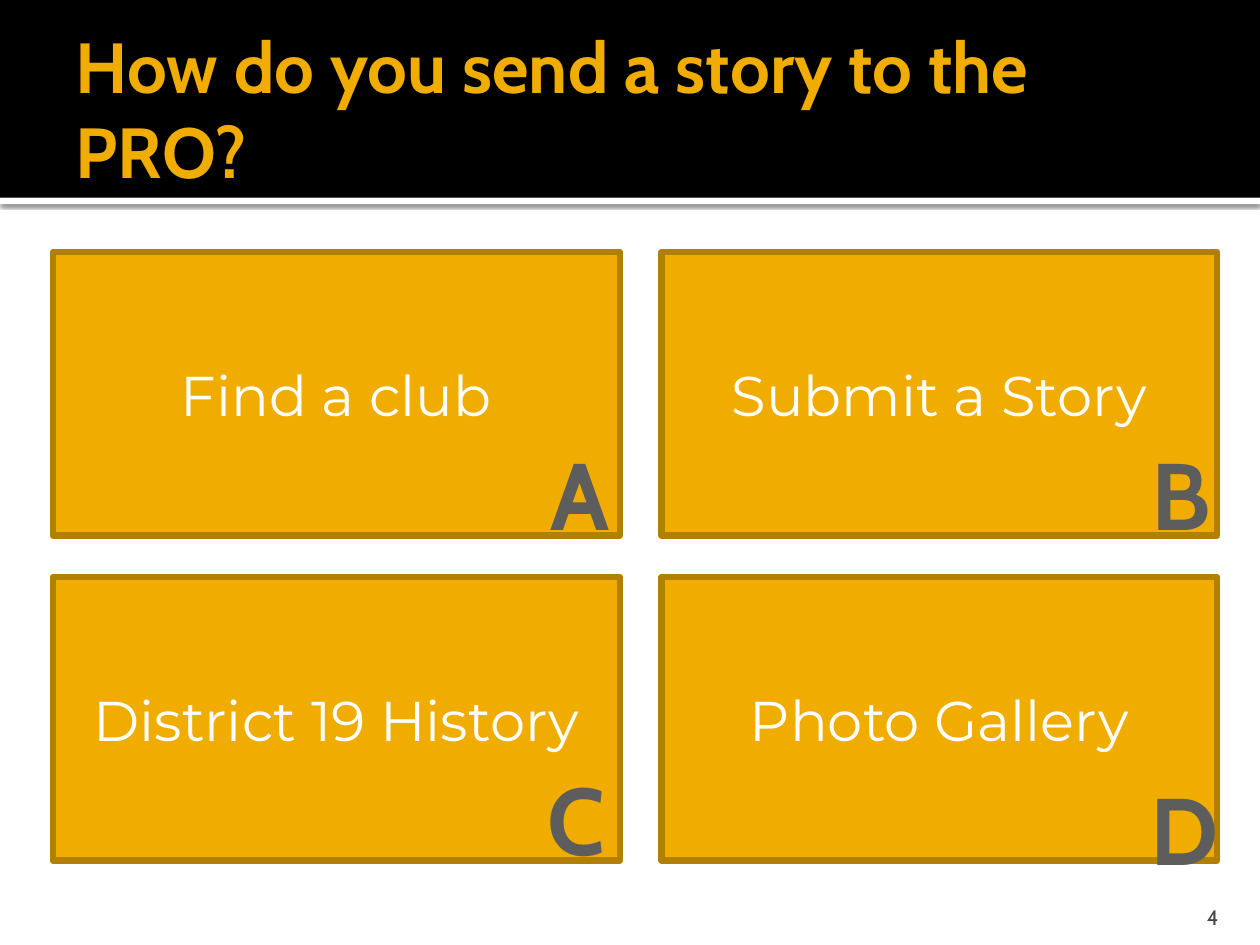
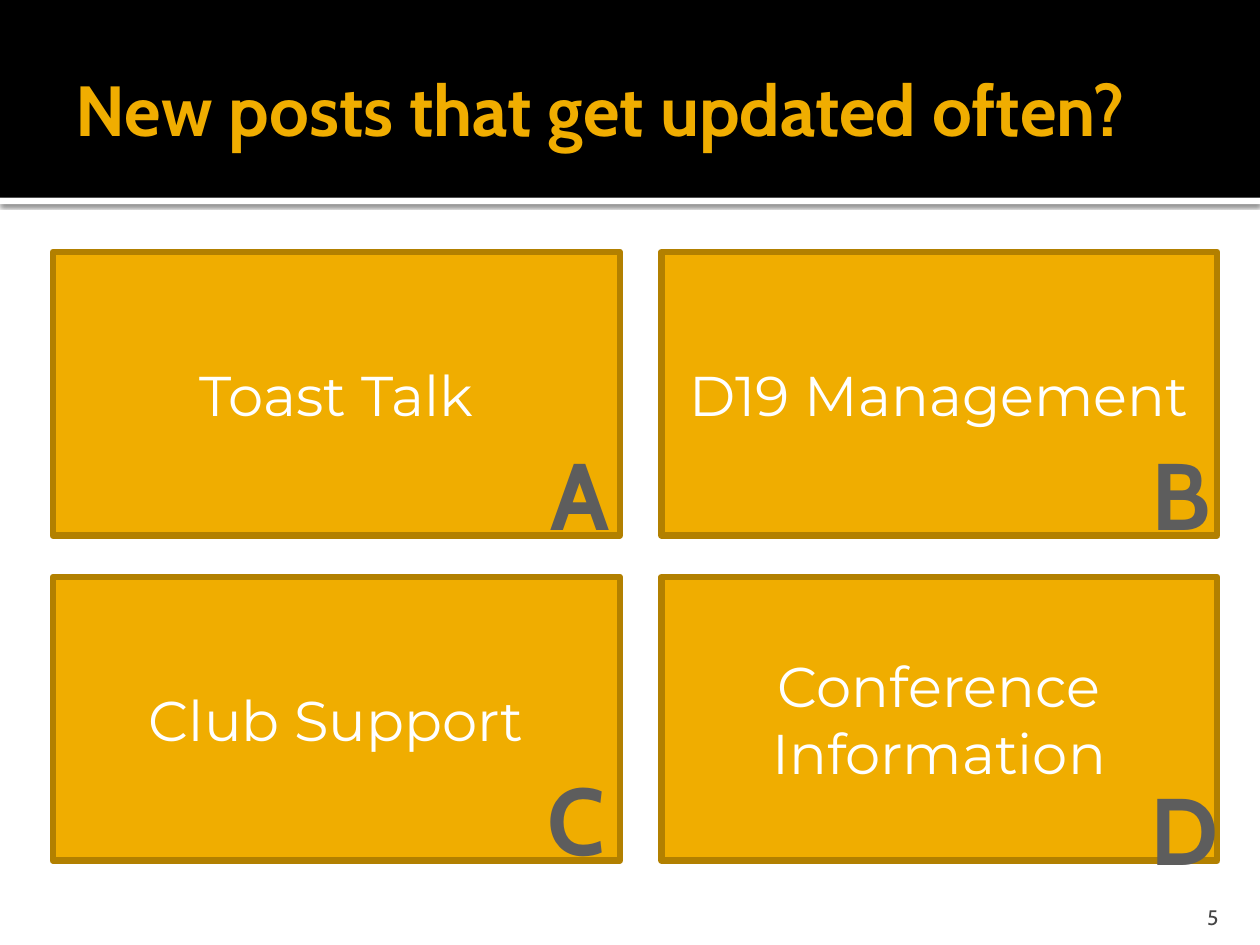
from lxml import etree
from pptx import Presentation
from pptx import util as u
from pptx.dml.color import RGBColor
from pptx.enum import shapes, text
from pptx.oxml import ns, parse_xml

GOLD, DARK_GOLD = "F0AD00", "B28000"
BLACK, WHITE, GREY = "000000", "FFFFFF", "454545"
HEADING_FONT, BODY_FONT = "Cabin", "Montserrat"

TITLE_ONLY = 5
FIRST_NUMBER = 4
BAND_HEIGHT = 1.57
CARD_HEIGHT = 2.25
COLUMNS = [(0.42, 4.5), (5.25, 4.41)]  # left, width
ROWS = [2, 4.58]
# letter, offset from the card's left and top, width
LETTERS = [("A", 3.83, 1.41, 0.7), ("B", 3.79, 1.41, 0.67),
           ("C", 3.83, 1.41, 0.64), ("D", 3.78, 1.49, 0.72)]
LETTER_STOPS = [(0, "555555"), (49, "5D5D5D"), (50, BLACK), (95, BLACK), (100, BLACK)]

QUESTIONS = [
    ("How do you send a story to the PRO?",
     ["Find a club", "Submit a Story", "District 19 History", "Photo Gallery"]),
    ("New posts that get updated often?",
     ["Toast Talk", "D19 Management", "Club Support", "Conference Information"]),
]


def colour(hex_string):
    return RGBColor.from_string(hex_string)


def inches(box):
    return [u.Inches(value) for value in box]


def write(shape, words, size, font, ink, align, anchor, bold=False,
          insets=(0.1, 0.05, 0.1, 0.05), wrap=True):
    """Put one formatted run into the shape and return it."""
    frame = shape.text_frame
    frame.word_wrap = wrap
    frame.auto_size = text.MSO_AUTO_SIZE.NONE
    frame.vertical_anchor = anchor
    (frame.margin_left, frame.margin_top,
     frame.margin_right, frame.margin_bottom) = inches(insets)
    paragraph = frame.paragraphs[0]
    paragraph.alignment = align
    run = paragraph.add_run()
    run.text = words
    run.font.name, run.font.size, run.font.bold = font, u.Pt(size), bold
    if ink:
        run.font.color.rgb = colour(ink)
    return run


def add_rectangle(slide, box, fill, line=None):
    shape = slide.shapes.add_shape(shapes.MSO_SHAPE.RECTANGLE, *inches(box))
    shape.shadow.inherit = False
    shape.fill.solid()
    shape.fill.fore_color.rgb = colour(fill)
    if line:
        shape.line.color.rgb = colour(line)
        shape.line.width = u.Pt(3.78)
    else:
        shape.line.fill.background()
    return shape


def add_drop_shadow(shape):
    effects = shape._element.spPr.find(ns.qn("a:effectLst"))
    shadow = etree.SubElement(effects, ns.qn("a:outerShdw"), blurRad=str(u.Pt(2.5)),
                              dist=str(u.Pt(0.8)), dir="5400000", rotWithShape="0")
    ink = etree.SubElement(shadow, ns.qn("a:srgbClr"), val=BLACK)
    etree.SubElement(ink, ns.qn("a:alpha"), val="60000")


def add_header(slide, words):
    rule = add_rectangle(slide, (0, BAND_HEIGHT, 10, 0.05), WHITE)
    add_drop_shadow(rule)
    add_rectangle(slide, (0, 0, 10, BAND_HEIGHT), BLACK)
    title = slide.shapes.title
    slide.shapes._spTree.append(title._element)  # in front of the band
    title.left, title.top, title.width, title.height = inches((0.5, 0.17, 9, 1.37))
    write(title, words, 40.5, HEADING_FONT, GOLD, text.PP_ALIGN.LEFT,
          text.MSO_ANCHOR.MIDDLE, bold=True, insets=(0.1, 0.05, 0.05, 0.05))


def style_letter(run):
    """Give the run a vertical gradient and a thin white outline."""
    stops = "".join(f'<a:gs pos="{place * 1000}"><a:srgbClr val="{ink}"/></a:gs>'
                    for place, ink in LETTER_STOPS)
    gradient = parse_xml(f'<a:gradFill {ns.nsdecls("a")}><a:gsLst>{stops}</a:gsLst>'
                         '<a:lin ang="5400000" scaled="0"/></a:gradFill>')
    outline = parse_xml(f'<a:ln {ns.nsdecls("a")} w="{u.Pt(1.4)}"><a:solidFill>'
                        f'<a:srgbClr val="{WHITE}"/></a:solidFill></a:ln>')
    properties = run._r.get_or_add_rPr()
    properties.insert(0, gradient)
    properties.insert(0, outline)


def add_letter(slide, card, letter, dx, dy, width):
    left, top = card[:2]
    box = slide.shapes.add_textbox(*inches((left + dx, top + dy, width, 1.01)))
    run = write(box, letter, 54, HEADING_FONT, None, text.PP_ALIGN.CENTER,
                text.MSO_ANCHOR.TOP, bold=True, wrap=False)
    box.text_frame.auto_size = text.MSO_AUTO_SIZE.SHAPE_TO_FIT_TEXT
    style_letter(run)


def add_answers(slide, answers):
    cards = [(left, top, width, CARD_HEIGHT) for top in ROWS for left, width in COLUMNS]
    for card, answer in zip(cards, answers):
        shape = add_rectangle(slide, card, GOLD, DARK_GOLD)
        write(shape, answer, 32, BODY_FONT, WHITE, text.PP_ALIGN.CENTER,
              text.MSO_ANCHOR.MIDDLE)
    for card, letter in zip(cards, LETTERS):
        add_letter(slide, card, *letter)


def add_number(slide, number):
    box = slide.shapes.add_textbox(*inches((8.97, 7.08, 0.8, 0.3)))
    write(box, str(number), 12, HEADING_FONT, GREY, text.PP_ALIGN.RIGHT,
          text.MSO_ANCHOR.BOTTOM, insets=(0.1, 0.05, 0.1, 0))


def add_question(presentation, number, question, answers):
    slide = presentation.slides.add_slide(presentation.slide_layouts[TITLE_ONLY])
    add_header(slide, question)
    add_answers(slide, answers)
    add_number(slide, number)


def main():
    presentation = Presentation()
    presentation.slide_width, presentation.slide_height = inches((10, 7.5))
    for number, (question, answers) in enumerate(QUESTIONS, FIRST_NUMBER):
        add_question(presentation, number, question, answers)
    presentation.save("out.pptx")


if __name__ == "__main__":
    main()
